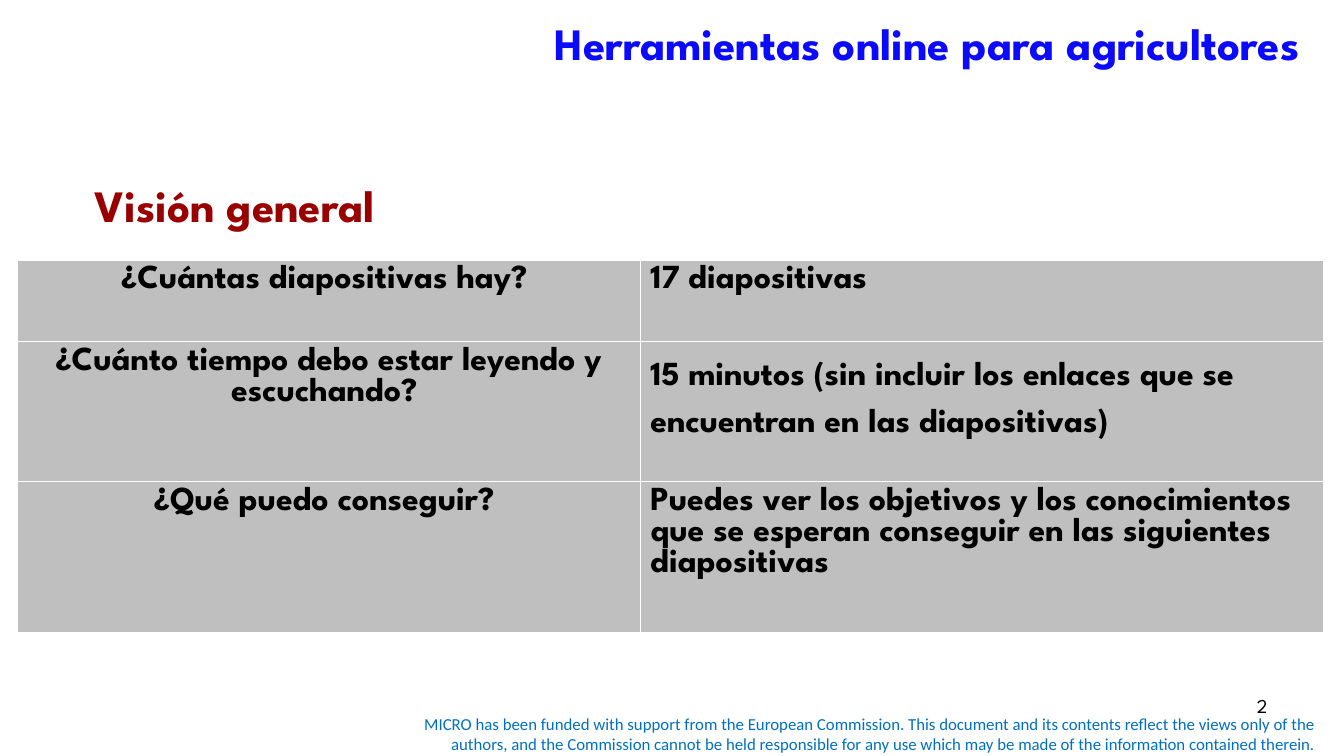
import pptx
import pptx.util
import pptx.dml.color
import pptx.enum.text
import pptx.oxml
import pptx.oxml.ns
from dataclasses import dataclass
from lxml import etree

Inches = pptx.util.Inches
Align = pptx.enum.text.PP_ALIGN
Anchor = pptx.enum.text.MSO_ANCHOR


@dataclass
class Theme:
    head: str = "League Spartan"
    body: str = "Calibri"
    blue: str = "0B0AFD"
    red: str = "990000"
    sky: str = "0070C0"
    black: str = "000000"
    gray: str = "BFBFBF"
    white: str = "FFFFFF"
    big: int = 32
    mid: int = 24
    page: int = 14
    note: int = 12
    rule: int = 1


class Deck:
    def __init__(self, theme):
        self.theme = theme
        self.show = pptx.Presentation()
        self.show.slide_width = Inches(13.33)
        self.show.slide_height = Inches(7.5)
        self.slide = self.show.slides.add_slide(self.show.slide_layouts[6])

    def style(self, para, size, color, bold, align, face=None):
        para.alignment = align
        font = para.font
        font.name = face or self.theme.head
        font.size = pptx.util.Pt(size)
        font.bold = bold
        font.color.rgb = pptx.dml.color.RGBColor.from_string(color)

    def text(self, words, box, size, color, bold=False, align=Align.LEFT,
             face=None, anchor=Anchor.TOP):
        frame = self.slide.shapes.add_textbox(*map(Inches, box)).text_frame
        frame.word_wrap = True
        frame.vertical_anchor = anchor
        frame.text = words
        self.style(frame.paragraphs[0], size, color, bold, align, face)
        return frame

    def border(self, cell):
        props = cell._tc.get_or_add_tcPr()
        for side in ("lnL", "lnR", "lnT", "lnB"):
            line = etree.SubElement(props, pptx.oxml.ns.qn(f"a:{side}"))
            line.set("w", str(pptx.util.Pt(self.theme.rule)))
            fill = etree.SubElement(line, pptx.oxml.ns.qn("a:solidFill"))
            tint = etree.SubElement(fill, pptx.oxml.ns.qn("a:srgbClr"))
            tint.set("val", self.theme.white)

    def table(self, rows, left, top, widths, heights):
        size = (sum(widths), sum(heights))
        grid = self.slide.shapes.add_table(
            len(rows), len(widths), *map(Inches, (left, top, *size))).table
        grid.first_row = grid.horz_banding = False
        for col, width in zip(grid.columns, widths):
            col.width = Inches(width)
        for row, height, words in zip(grid.rows, heights, rows):
            row.height = Inches(height)
            for cell, word, align in zip(row.cells, words, (Align.CENTER, Align.LEFT)):
                cell.text = word
                self.style(cell.text_frame.paragraphs[0], self.theme.mid,
                           self.theme.black, True, align)
                self.border(cell)
                cell.fill.solid()
                cell.fill.fore_color.rgb = pptx.dml.color.RGBColor.from_string(
                    self.theme.gray)
        return grid


def main():
    theme = Theme()
    deck = Deck(theme)
    deck.text(
        "MICRO has been funded with support from the European Commission. "
        "This document and its contents reflect the views only of the authors, "
        "and the Commission cannot be held responsible for any use which may be "
        "made of the information contained therein.",
        (3.75, 7.03, 9.4, 0.5), theme.note, theme.sky,
        align=Align.RIGHT, face=theme.body, anchor=Anchor.MIDDLE)
    title = deck.text("Herramientas online para agricultores", (1.14, 0, 12, 1.25),
                      theme.big, theme.blue, True, Align.RIGHT, anchor=Anchor.MIDDLE)
    title.margin_right = Inches(0.24)
    title.margin_bottom = Inches(0.46)
    rows = [
        ("¿Cuántas diapositivas hay? ", "17 diapositivas"),
        ("¿Cuánto tiempo debo estar leyendo y escuchando? ",
         "15 minutos (sin incluir los enlaces que se encuentran en las diapositivas)"),
        ("¿Qué puedo conseguir? ",
         "Puedes ver los objetivos y los conocimientos que se esperan conseguir "
         "en las siguientes diapositivas"),
    ]
    grid = deck.table(rows, 0.17, 2.58, (6.18, 6.78), (0.81, 1.39, 1.5))
    grid.cell(1, 1).text_frame.paragraphs[0].line_spacing = 1.5
    deck.text("2", (9.56, 6.83, 3.11, 0.52), theme.page, theme.black, align=Align.RIGHT)
    deck.text("Visión general", (0.84, 1.71, 3.99, 0.64), theme.big, theme.red, True)
    deck.show.save("out.pptx")


if __name__ == "__main__":
    main()
